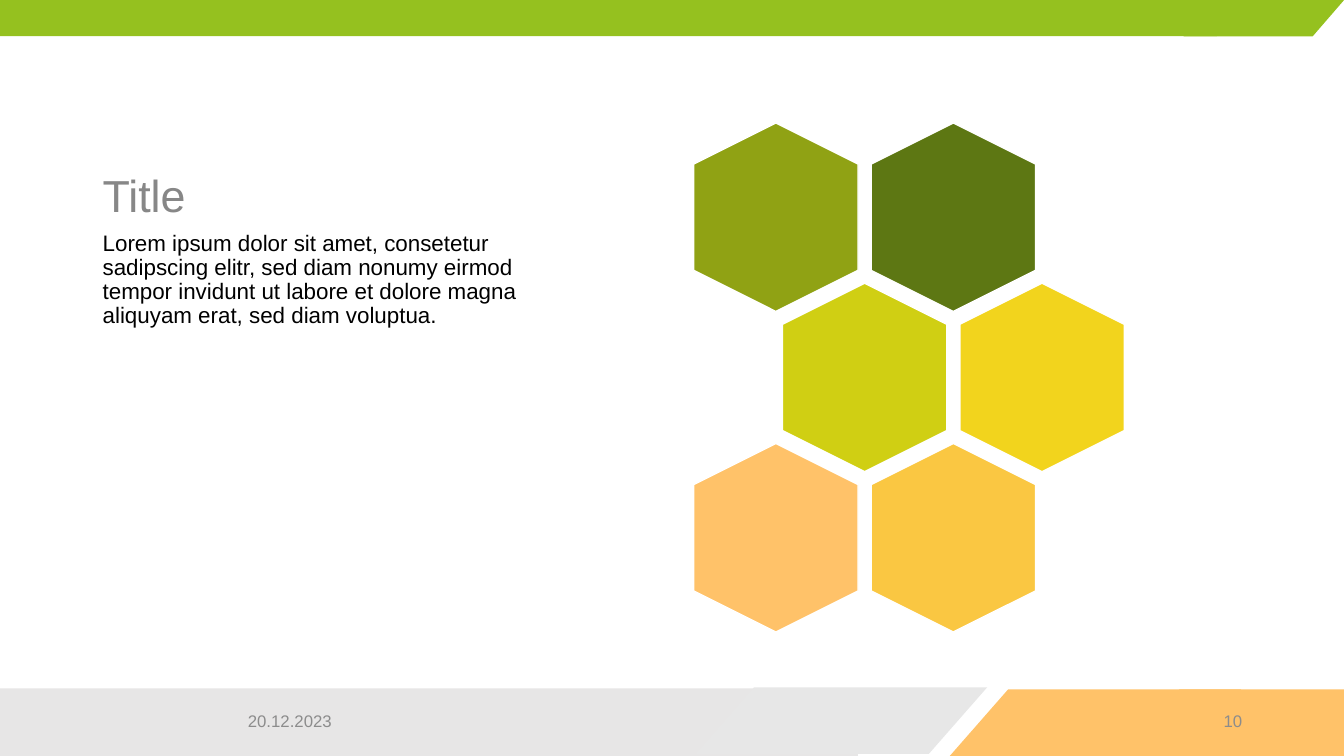
import pptx
import pptx.util
import pptx.dml.color
import pptx.enum.shapes
import pptx.enum.text

PX = 9144
SHAPE = pptx.enum.shapes.MSO_SHAPE
ANCHOR = pptx.enum.text.MSO_ANCHOR
ALIGN = pptx.enum.text.PP_ALIGN

COLORS = {
    "lime": "95C11F",
    "light gray": "E7E6E6",
    "slanted gray": "E7E7E7",
    "title gray": "878787",
    "footer gray": "8C8C8C",
    "black": "000000",
    "white": "FFFFFF",
    "olive": "90A214",
    "forest": "5D7713",
    "chartreuse": "D0CF13",
    "yellow": "F2D41D",
    "peach": "FFC269",
    "amber": "FAC742",
}

BANDS = [
    (SHAPE.FLOWCHART_DATA, 942, 684, 289, 66, "peach"),
    (SHAPE.FLOWCHART_DATA, 1112, 684, 289, 66, "peach"),
    (SHAPE.RECTANGLE, 0, 683, 851, 67, "light gray"),
    (SHAPE.FLOWCHART_DATA, 690, 682, 289, 66, "slanted gray"),
    (SHAPE.RECTANGLE, 0, -1, 1207, 37, "lime"),
    (SHAPE.FLOWCHART_DATA, 1174, -1, 160, 37, "lime"),
]

HONEYCOMB = [("olive", "forest"), ("chartreuse", "yellow"), ("peach", "amber")]
HEX_LEFT, HEX_TOP, HEX_LENGTH, HEX_BREADTH = 676, 134, 187, 163
COLUMN_PITCH, ROW_PITCH = 176, 159

BODY = (
    "Lorem ipsum dolor sit amet, consetetur sadipscing elitr, sed diam nonumy "
    "eirmod tempor invidunt ut labore et dolore magna aliquyam erat, sed diam voluptua."
)


def rgb(color):
    return pptx.dml.color.RGBColor.from_string(COLORS[color])


def px(*lengths):
    return [pptx.util.Emu(length * PX) for length in lengths]


def add_filled(slide, preset, left, top, width, height, color):
    filled = slide.shapes.add_shape(preset, *px(left, top, width, height))
    filled.shadow.inherit = False
    filled.fill.solid()
    filled.fill.fore_color.rgb = rgb(color)
    filled.line.fill.background()
    return filled


def add_hexagon(slide, left, top, color):
    hexagon = add_filled(slide, SHAPE.HEXAGON, left, top, HEX_LENGTH, HEX_BREADTH, color)
    hexagon.adjustments[0] = 0.25
    hexagon.rotation = 90
    hexagon.line.color.rgb = rgb("white")
    hexagon.line.width = pptx.util.Pt(1)


def add_honeycomb(slide):
    for row, row_colors in enumerate(HONEYCOMB):
        indent = row % 2 * COLUMN_PITCH // 2
        for column, color in enumerate(row_colors):
            left = HEX_LEFT + indent + column * COLUMN_PITCH
            add_hexagon(slide, left, HEX_TOP + row * ROW_PITCH, color)


def add_text(slide, box, words, size, color, anchor, align=ALIGN.LEFT, line_spacing=1.0):
    frame = slide.shapes.add_textbox(*px(*box)).text_frame
    frame.word_wrap = True
    frame.vertical_anchor = anchor
    paragraph = frame.paragraphs[0]
    paragraph.alignment = align
    paragraph.line_spacing = line_spacing
    run = paragraph.add_run()
    run.text = words
    run.font.name = "Arial"
    run.font.size = pptx.util.Pt(size)
    run.font.color.rgb = rgb(color)


def main():
    presentation = pptx.Presentation()
    presentation.slide_width, presentation.slide_height = px(1333, 750)
    slide = presentation.slides.add_slide(presentation.slide_layouts[6])
    for band in BANDS:
        add_filled(slide, *band)
    add_text(slide, (92, 50, 430, 175), "Title", 32, "title gray", ANCHOR.BOTTOM, line_spacing=0.9)
    add_text(slide, (92, 225, 430, 417), BODY, 16, "black", ANCHOR.TOP, line_spacing=0.9)
    add_text(slide, (236, 695, 155, 40), "20.12.2023", 12, "footer gray", ANCHOR.MIDDLE)
    add_text(slide, (942, 695, 300, 40), "10", 12, "footer gray", ANCHOR.MIDDLE, ALIGN.RIGHT)
    add_honeycomb(slide)
    presentation.save("out.pptx")


if __name__ == "__main__":
    main()
